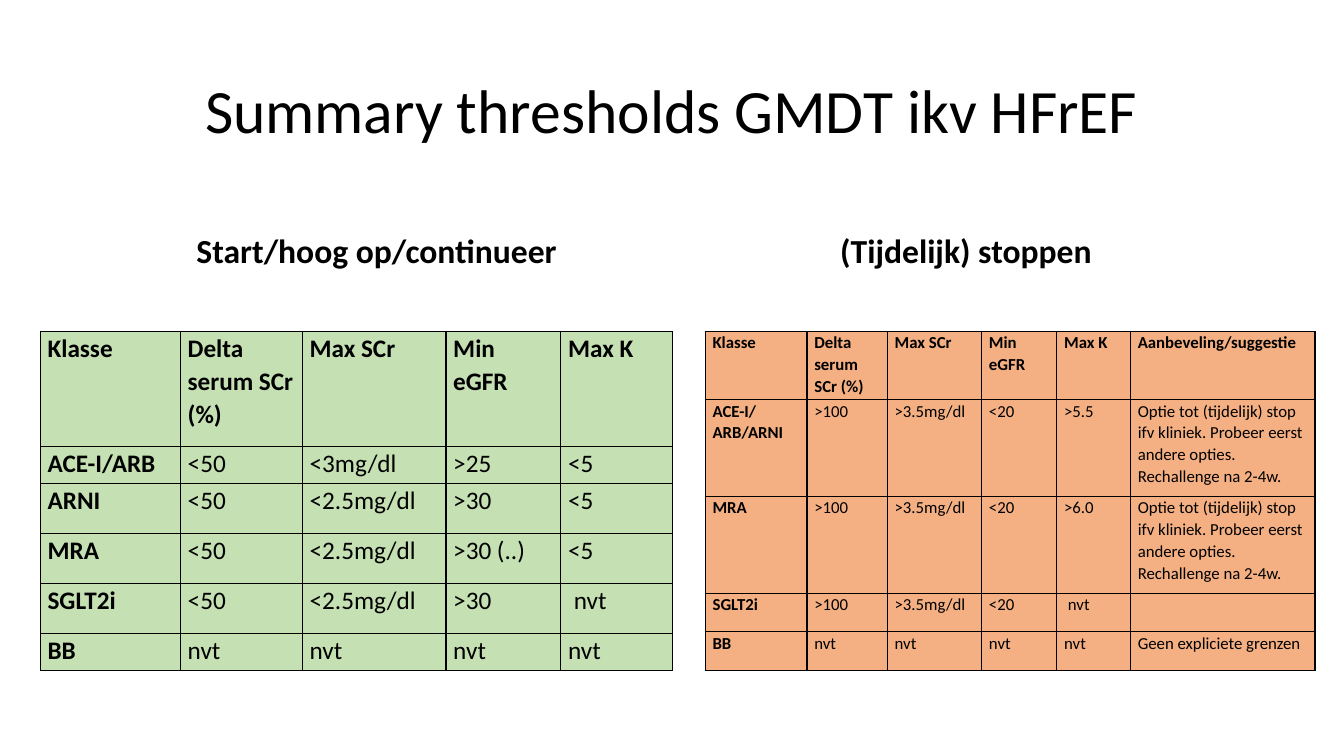
from lxml import etree
from pptx import Presentation
from pptx.dml.color import RGBColor
from pptx.enum.text import MSO_ANCHOR, PP_ALIGN
from pptx.oxml.ns import qn
from pptx.util import Pt

CENTER = PP_ALIGN.CENTER
MIDDLE = MSO_ANCHOR.MIDDLE
BOTTOM = MSO_ANCHOR.BOTTOM

BLACK = RGBColor(0x00, 0x00, 0x00)
GREEN = RGBColor(0xC5, 0xE0, 0xB3)
ORANGE = RGBColor(0xF4, 0xB0, 0x83)
FONT = "Calibri"
COMPARE = 4  # layout with a title and two headed columns

ADVICE = ("Optie tot (tijdelijk) stop ifv kliniek. Probeer eerst andere opties. "
          "Rechallenge na 2-4w.")
LIMITS = ["Klasse", "Delta serum SCr (%)", "Max SCr", "Min eGFR", "Max K"]

START = [
    LIMITS,
    ["ACE-I/ARB", "<50", "<3mg/dl", ">25", "<5"],
    ["ARNI", "<50", "<2.5mg/dl", ">30", "<5"],
    ["MRA", "<50", "<2.5mg/dl", ">30 (..)", "<5"],
    ["SGLT2i", "<50", "<2.5mg/dl", ">30", " nvt"],
    ["BB"] + ["nvt"] * 4,
]
START_COLS = [100.1, 87.1, 102.6, 82.1, 79.5]
START_ROWS = [82.1, 26.6, 35.6, 35.6, 35.6, 26.6]

STOP = [
    LIMITS + ["Aanbeveling/suggestie"],
    ["ACE-I/ARB/ARNI", ">100", ">3.5mg/dl", "<20", ">5.5", ADVICE],
    ["MRA", ">100", ">3.5mg/dl", "<20", ">6.0", ADVICE],
    ["SGLT2i", ">100", ">3.5mg/dl", "<20", " nvt", ""],
    ["BB"] + ["nvt"] * 4 + ["Geen expliciete grenzen"],
]
STOP_COLS = [72.7, 57.4, 67.4, 53.7, 52.6, 131.8]
STOP_ROWS = [48.7, 69.1, 69.1, 27.5, 27.5]


def set_font(para, size, bold):
    font = para.font
    font.name = FONT
    font.size = Pt(size)
    font.bold = bold
    font.color.rgb = BLACK


def fill_holder(holder, text, box, size, bold, anchor):
    """Move a placeholder to box and give it one centred line of text."""
    holder.left, holder.top, holder.width, holder.height = map(Pt, box)
    frame = holder.text_frame
    frame.text = text
    frame.vertical_anchor = anchor
    para = frame.paragraphs[0]
    para.alignment = CENTER
    para.line_spacing = 0.9
    para.space_before = Pt(10 if bold else 0)
    set_font(para, size, bold)


def add_borders(cell):
    props = cell._tc.get_or_add_tcPr()
    for side in ("a:lnL", "a:lnR", "a:lnT", "a:lnB"):
        line = etree.SubElement(props, qn(side), w=str(Pt(1)))
        fill = etree.SubElement(line, qn("a:solidFill"))
        etree.SubElement(fill, qn("a:srgbClr"), val=str(BLACK))


def fill_cell(cell, text, size, bold, color):
    add_borders(cell)
    cell.fill.solid()
    cell.fill.fore_color.rgb = color
    cell.margin_left = cell.margin_right = Pt(5.2)
    cell.margin_top = cell.margin_bottom = Pt(0)
    cell.text = text
    para = cell.text_frame.paragraphs[0]
    para.line_spacing = 1.07
    para.space_after = Pt(8)
    set_font(para, size, bold)


def add_grid(slide, left, data, cols, rows, size, color):
    """Add a table whose first row and first column are bold."""
    frame = slide.shapes.add_table(len(rows), len(cols), Pt(left), Pt(236.8),
                                   Pt(sum(cols)), Pt(sum(rows)))
    table = frame.table
    table.first_row = table.horz_banding = False
    for col, width in zip(table.columns, cols):
        col.width = Pt(width)
    for row, height in zip(table.rows, rows):
        row.height = Pt(height)
    for r, line in enumerate(data):
        for c, text in enumerate(line):
            fill_cell(table.cell(r, c), text, size, r == 0 or c == 0, color)


def main():
    deck = Presentation()
    deck.slide_width, deck.slide_height = Pt(960), Pt(540)
    slide = deck.slides.add_slide(deck.slide_layouts[COMPARE])
    title, start, start_body, stop, stop_body = slide.placeholders
    for holder in (start_body, stop_body):
        holder.element.getparent().remove(holder.element)

    fill_holder(title, "Summary thresholds GMDT ikv HFrEF",
                (66, 28.8, 828, 104.4), 44, False, MIDDLE)
    fill_holder(start, "Start/hoog op/continueer",
                (66, 132.4, 406.1, 64.9), 24, True, BOTTOM)
    fill_holder(stop, "(Tijdelijk) stoppen",
                (486, 132.4, 408, 64.9), 24, True, BOTTOM)

    add_grid(slide, 503.8, STOP, STOP_COLS, STOP_ROWS, 12, ORANGE)
    add_grid(slide, 28.8, START, START_COLS, START_ROWS, 18, GREEN)
    deck.save("out.pptx")


if __name__ == "__main__":
    main()
